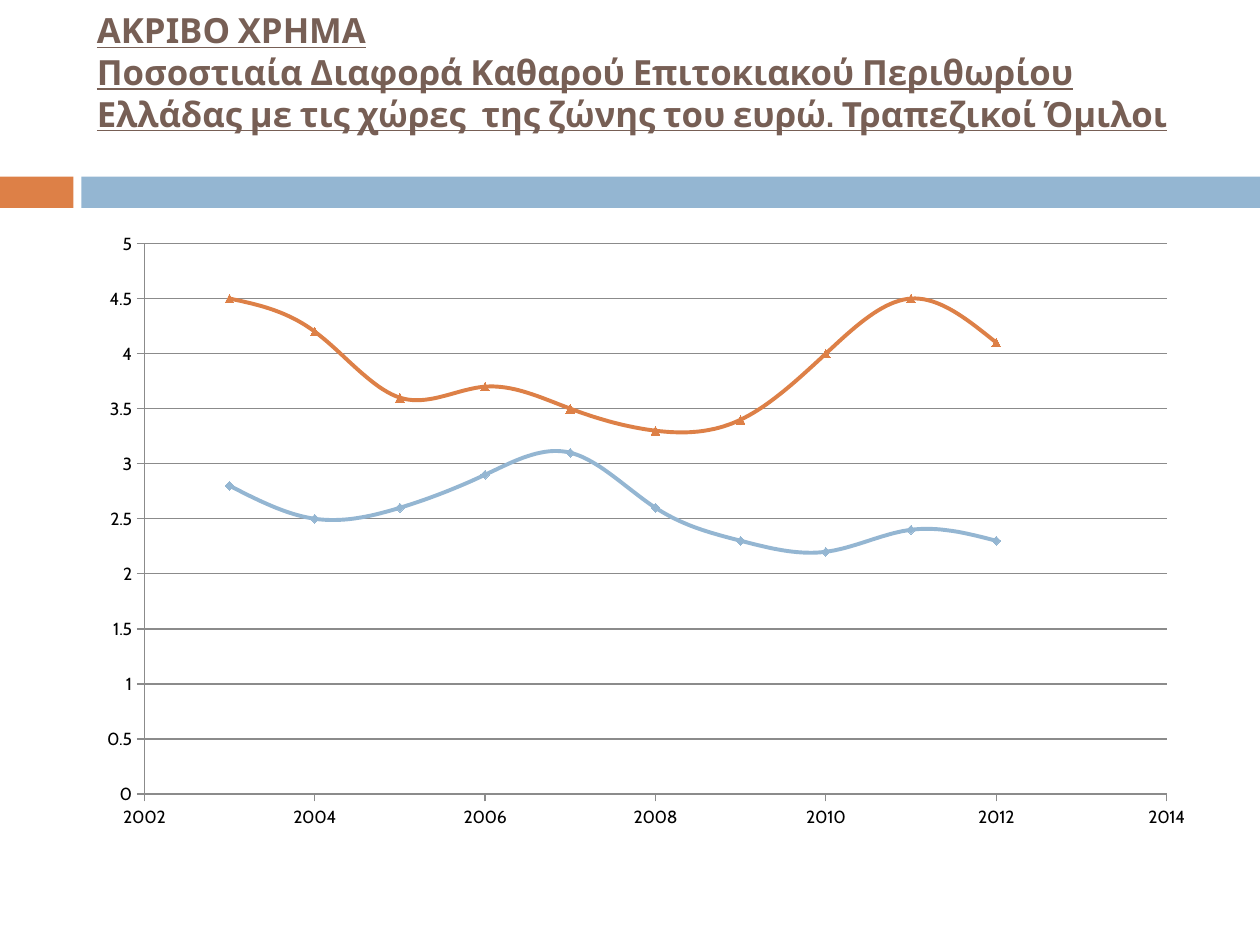
from pptx import Presentation
from pptx.chart.data import XyChartData
from pptx.dml.color import RGBColor
from pptx.enum.chart import XL_CHART_TYPE as ChartType, XL_MARKER_STYLE as Marker, XL_TICK_MARK as Tick
from pptx.enum.shapes import MSO_SHAPE as Shape
from pptx.enum.text import MSO_ANCHOR as Anchor, MSO_AUTO_SIZE as AutoSize, PP_ALIGN as Align
from pptx.oxml import parse_xml
from pptx.oxml.ns import nsdecls
from pptx.util import Cm, Pt

BLUE = RGBColor(0x94, 0xB6, 0xD2)
ORANGE = RGBColor(0xDD, 0x80, 0x47)
BROWN = RGBColor(0x77, 0x5F, 0x55)
GRAY = RGBColor(0x8B, 0x8B, 0x8B)
BLACK = RGBColor(0, 0, 0)

TITLE = [
    "ΑΚΡΙΒΟ ΧΡΗΜΑ",
    "Ποσοστιαία Διαφορά Καθαρού Επιτοκιακού Περιθωρίου",
    "Ελλάδας με τις χώρες  της ζώνης του ευρώ. Τραπεζικοί Όμιλοι",
]
FIRST_YEAR = 2003
SERIES = [
    ("Series 1", BLUE, Marker.DIAMOND,
     [2.8, 2.5, 2.6, 2.9, 3.1, 2.6, 2.3, 2.2, 2.4, 2.3]),
    ("Series 2", ORANGE, Marker.TRIANGLE,
     [4.5, 4.2, 3.6, 3.7, 3.5, 3.3, 3.4, 4, 4.5, 4.1]),
]


class SlideBuilder:
    font = "Cabin"

    def __init__(self, slide):
        self.slide = slide

    def bar(self, left, top, width, height, color):
        sp = self.slide.shapes.add_shape(
            Shape.RECTANGLE, Cm(left), Cm(top), Cm(width), Cm(height))
        sp.shadow.inherit = False
        sp.fill.solid()
        sp.fill.fore_color.rgb = color
        sp.line.fill.background()

    def title(self, left, top, width, height, lines):
        sp = self.slide.shapes.title
        sp.left, sp.top, sp.width, sp.height = Cm(left), Cm(top), Cm(width), Cm(height)
        tf = sp.text_frame
        tf.word_wrap = True
        tf.auto_size = AutoSize.NONE
        tf.vertical_anchor = Anchor.MIDDLE
        tf.margin_bottom = Cm(1.7)  # lifts the text clear of the bars
        p = tf.paragraphs[0]
        p.alignment = Align.LEFT
        p.line_spacing = 1.0
        for i, line in enumerate(lines):
            if i:
                p.add_line_break()
            r = p.add_run()
            r.text = line
            r.font.name = self.font
            r.font.size = Pt(19.8)
            r.font.bold = r.font.underline = True
            r.font.color.rgb = BROWN

    def axis(self, axis, low, high, step, grid):
        axis.minimum_scale, axis.maximum_scale = low, high
        axis.major_unit = step
        axis.major_tick_mark = Tick.OUTSIDE
        axis.minor_tick_mark = Tick.NONE
        axis.has_title = False
        axis.has_major_gridlines = grid
        axis.tick_labels.number_format = "General"
        axis.tick_labels.number_format_is_linked = False
        lines = [axis.format.line]
        if grid:
            lines.append(axis.major_gridlines.format.line)
        for line in lines:
            line.color.rgb = GRAY
            line.width = Pt(0.75)

    def smooth_chart(self, left, top, width, height, series):
        data = XyChartData()
        for name, _, _, values in series:
            points = data.add_series(name)
            for year, value in enumerate(values, FIRST_YEAR):
                points.add_data_point(year, value)
        chart = self.slide.shapes.add_chart(
            ChartType.XY_SCATTER_SMOOTH, Cm(left), Cm(top), Cm(width), Cm(height), data).chart
        chart.has_title = chart.has_legend = False
        chart.font.name = self.font
        chart.font.size = Pt(10)
        chart.font.color.rgb = BLACK
        plot = chart.plots[0]
        plot.vary_by_categories = False
        for ser, (_, color, symbol, _) in zip(plot.series, series):
            ser._element.get_or_add_smooth().set("val", "1")
            ser.format.line.color.rgb = color
            ser.format.line.width = Pt(2.25)
            ser.marker.style = symbol
            ser.marker.size = 5
            ser.marker.format.fill.solid()
            ser.marker.format.fill.fore_color.rgb = color
            ser.marker.format.line.color.rgb = color
        self.axis(chart.category_axis, 2002, 2014, 2, False)
        self.axis(chart.value_axis, 0, 5, 0.5, True)
        self.plot_layout(chart, x=1.21 / width, y=0.46 / height,
                         w=20.61 / width, h=11.1 / height)

    def plot_layout(self, chart, **box):
        """Fix the inner plot area as fractions of the chart."""
        modes = "".join(f'<c:{k}Mode val="edge"/>' for k in "xy")
        sizes = "".join(f'<c:{k} val="{v}"/>' for k, v in box.items())
        area = chart._chartSpace.chart.plotArea
        for old in area.xpath("c:layout"):
            area.remove(old)
        area.insert(0, parse_xml(
            f'<c:layout {nsdecls("c")}><c:manualLayout><c:layoutTarget val="inner"/>'
            f"{modes}{sizes}</c:manualLayout></c:layout>"))


def main():
    prs = Presentation()
    prs.slide_width, prs.slide_height = Cm(25.4), Cm(19.05)
    s = SlideBuilder(prs.slides.add_slide(prs.slide_layouts[5]))
    s.bar(0, 3.56, 1.48, 0.63, ORANGE)
    s.bar(1.64, 3.56, 23.76, 0.63, BLUE)
    s.title(1.7, 0.91, 22.66, 2.64, TITLE)
    s.smooth_chart(1.7, 4.45, 22.66, 12.5, SERIES)
    prs.save("out.pptx")


if __name__ == "__main__":
    main()
